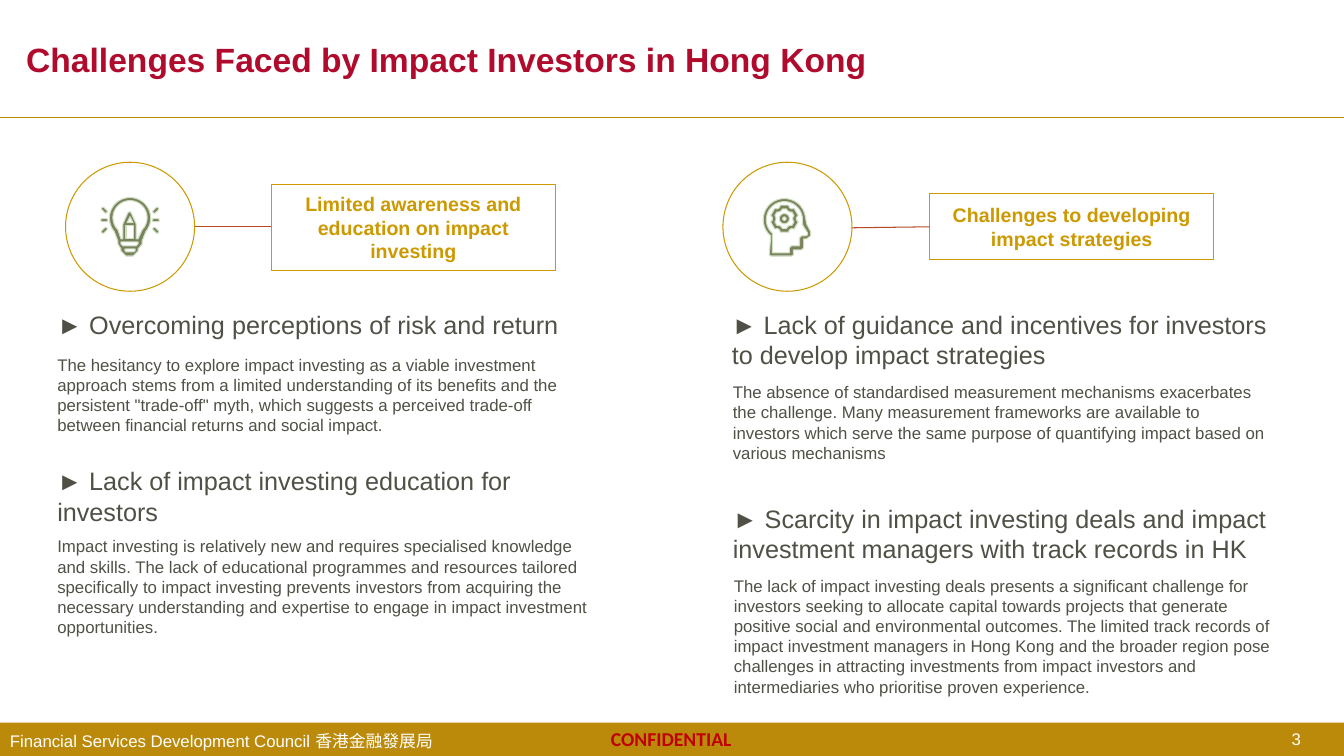
from dataclasses import dataclass
from math import cos, radians, sin

from lxml.etree import SubElement
from pptx import Presentation
from pptx.dml.color import RGBColor
from pptx.enum.shapes import MSO_CONNECTOR as Connector
from pptx.enum.shapes import MSO_SHAPE as Preset
from pptx.enum.text import MSO_ANCHOR as Anchor
from pptx.enum.text import MSO_AUTO_SIZE as AutoSize
from pptx.enum.text import PP_ALIGN as Align
from pptx.oxml.ns import qn
from pptx.util import Emu, Pt

EMU_PER_PX = 9144  # 100 px to the inch
Point = tuple[float, float]


@dataclass(frozen=True)
class Theme:
    font: str = "Arial"
    stamp_font: str = "Calibri"
    title: str = "B00B2D"
    gold: str = "CC9900"
    footer: str = "BB8A0A"
    stamp: str = "C00000"
    link: str = "B64926"
    body: str = "505046"
    icon: str = "7B815C"
    icon_edge: str = "CDDFC1"
    white: str = "FFFFFF"
    title_size: int = 24
    heading_size: int = 18
    label_size: int = 14
    body_size: int = 12
    line_width: float = 0.75


@dataclass(frozen=True)
class Box:
    left: int
    top: int
    width: int
    height: int


@dataclass(frozen=True)
class Theme_Header:
    circle: Box
    label: Box
    text: str
    link_start: int
    link_end: int


@dataclass(frozen=True)
class Challenge:
    heading_box: Box
    heading: str
    body_box: Box
    body: str


@dataclass(frozen=True)
class Ray:
    center_x: int
    center_y: int
    rotation: int


THEME = Theme()

HEADERS = [
    Theme_Header(Box(65, 161, 128, 128), Box(269, 183, 282, 85),
                 "Limited awareness and education on impact investing", 225, 225),
    Theme_Header(Box(717, 161, 128, 128), Box(922, 192, 282, 66),
                 "Challenges to developing impact strategies", 226, 225),
]
CHALLENGES = [
    Challenge(Box(47, 302, 553, 40), "► Overcoming perceptions of risk and return",
              Box(47, 347, 553, 40),
              "The hesitancy to explore impact investing as a viable investment approach stems from a "
              "limited understanding of its benefits and the persistent \"trade-off\" myth, which "
              "suggests a perceived trade-off between financial returns and social impact."),
    Challenge(Box(47, 457, 553, 64), "► Lack of impact investing education for investors",
              Box(47, 527, 553, 40),
              "Impact investing is relatively new and requires specialised knowledge and skills. The "
              "lack of educational programmes and resources tailored specifically to impact investing "
              "prevents investors from acquiring the necessary understanding and expertise to engage "
              "in impact investment opportunities."),
    Challenge(Box(716, 302, 553, 115),
              "► Lack of guidance and incentives for investors to develop impact strategies",
              Box(717, 374, 553, 40),
              "The absence of standardised measurement mechanisms exacerbates the challenge. Many "
              "measurement frameworks are available to investors which serve the same purpose of "
              "quantifying impact based on various mechanisms"),
    Challenge(Box(717, 494, 570, 115),
              "► Scarcity in impact investing deals and impact investment managers with track "
              "records in HK",
              Box(718, 566, 553, 40),
              "The lack of impact investing deals presents a significant challenge for investors "
              "seeking to allocate capital towards projects that generate positive social and "
              "environmental outcomes. The limited track records of impact investment managers in "
              "Hong Kong and the broader region pose challenges in attracting investments from impact "
              "investors and intermediaries who prioritise proven experience."),
]
RAYS = [Ray(103, 218, 0), Ray(103, 208, 45), Ray(103, 228, -45),
        Ray(154, 218, 0), Ray(154, 208, -45), Ray(154, 228, 45)]


def px(length: float) -> Emu:
    return Emu(round(length * EMU_PER_PX))


def color(value: str) -> RGBColor:
    return RGBColor.from_string(value)


def write(shape, text: str, *, size: int, ink: str, font: str = THEME.font, bold: bool = False,
          align: Align = Align.LEFT, anchor: Anchor = Anchor.TOP, wrap: bool = True,
          insets: tuple[int, int, int, int] = (10, 5, 10, 5), spacing: float | None = None) -> None:
    frame = shape.text_frame
    frame.auto_size = AutoSize.NONE
    frame.word_wrap = wrap
    frame.vertical_anchor = anchor
    (frame.margin_left, frame.margin_top,
     frame.margin_right, frame.margin_bottom) = map(px, insets)
    paragraph = frame.paragraphs[0]
    paragraph.alignment = align
    if spacing:
        paragraph.line_spacing = Pt(spacing)
    run = paragraph.add_run()
    run.text = text
    run.font.name, run.font.size, run.font.bold = font, Pt(size), bold
    run.font.color.rgb = color(ink)


def place(box: Box) -> tuple[Emu, Emu, Emu, Emu]:
    return px(box.left), px(box.top), px(box.width), px(box.height)


def add_text(slide, box: Box, text: str, **style) -> None:
    write(slide.shapes.add_textbox(*place(box)), text, **style)


def paint(shape, fill: str | None, line: str | None) -> None:
    shape.shadow.inherit = False
    if fill:
        shape.fill.solid()
        shape.fill.fore_color.rgb = color(fill)
    else:
        shape.fill.background()
    if line:
        shape.line.color.rgb = color(line)
        shape.line.width = Pt(THEME.line_width)
    else:
        shape.line.fill.background()


def add_preset(slide, preset: Preset, box: Box, fill: str | None = None, line: str | None = None):
    shape = slide.shapes.add_shape(preset, *place(box))
    paint(shape, fill, line)
    return shape


def add_line(slide, start: Point, end: Point, ink: str) -> None:
    line = slide.shapes.add_connector(Connector.STRAIGHT, *map(px, start + end))
    line.line.color.rgb = color(ink)
    line.line.width = Pt(THEME.line_width)
    SubElement(line._element.spPr, qn("a:effectLst"))


def arc(x: float, y: float, radius: float, start: int = 0, end: int = 350) -> list[Point]:
    return [(x + radius * cos(radians(angle)), y + radius * sin(radians(angle)))
            for angle in range(start, end + 1, 10)]


def gear(x: float, y: float, tip: tuple[float, int], root: tuple[float, int]) -> list[Point]:
    corners = [(root[0], -root[1]), (tip[0], -tip[1]), tip, root]
    return [(x + radius * cos(radians(tooth + offset)), y + radius * sin(radians(tooth + offset)))
            for tooth in range(30, 390, 60) for radius, offset in corners]


def add_outline(slide, *contours: list[Point]) -> None:
    rings = [[(px(x), px(y)) for x, y in contour] for contour in contours]
    builder = slide.shapes.build_freeform(*rings[0][0], scale=1.0)
    for index, ring in enumerate(rings):
        if index:
            builder.move_to(*ring[0])
        builder.add_line_segments(ring[1:], close=True)
    paint(builder.convert_to_shape(), THEME.icon, THEME.icon_edge)


def add_bulb(slide) -> None:
    glass = arc(129, 216.5, 20.5, 140, 400) + [
        (141, 239), (141, 242), (137, 247), (137, 249), (132, 254), (125, 254),
        (120, 249), (120, 247), (117, 242), (117, 239)]
    hollow = arc(129, 216, 17, 135, 405) + [
        (137, 237), (135, 237), (135, 222), (130, 211), (129, 210), (127, 211),
        (122, 222), (122, 237), (120, 237)]
    pencil_tip = [(129, 215), (132, 221), (126, 221)]
    pencil = [(125, 224), (132, 224), (132, 237), (125, 237)]
    collar = [(120, 240), (137, 240), (137, 242), (135, 244), (122, 244), (120, 242)]
    base = [(124, 247), (134, 247), (134, 249), (132, 250), (125, 250), (124, 249)]
    add_outline(slide, glass, hollow, pencil_tip, pencil, collar, base)
    for ray in RAYS:
        shape = add_preset(slide, Preset.ROUNDED_RECTANGLE,
                           Box(ray.center_x - 3, ray.center_y - 1, 7, 3),
                           THEME.icon, THEME.icon_edge)
        shape.adjustments[0] = 0.5
        shape.rotation = ray.rotation


def add_head(slide) -> None:
    profile = arc(778, 218, 21, 130, 350) + [
        (800, 222), (804, 230), (804, 234), (800, 237), (797, 237), (797, 246), (795, 248),
        (787, 248), (787, 253), (785, 254), (765, 254), (763, 253)]
    hollow = arc(778, 218, 18, 130, 350) + [
        (796, 223), (801, 231), (801, 233), (799, 234), (795, 234), (793, 236), (793, 244),
        (785, 244), (783, 246), (783, 251), (766, 251), (766, 234)]
    add_outline(slide, profile, hollow)
    add_outline(slide, gear(778, 217, (14, 17), (12, 24)), gear(778, 217, (10, 11), (8.5, 22)))
    add_outline(slide, arc(778, 217, 5), arc(778, 217, 1.7))


def main() -> None:
    presentation = Presentation()
    presentation.slide_width, presentation.slide_height = px(1333), px(750)
    slide = presentation.slides.add_slide(presentation.slide_layouts[5])

    # Title and footer
    title = slide.shapes.title
    title.left, title.top, title.width, title.height = place(Box(26, 39, 1218, 40))
    write(title, "Challenges Faced by Impact Investors in Hong Kong", size=THEME.title_size,
          ink=THEME.title, bold=True, insets=(0, 0, 0, 0))
    add_line(slide, (0, 117), (1333, 117), THEME.footer)
    add_preset(slide, Preset.RECTANGLE, Box(0, 717, 1333, 33), THEME.footer)
    add_text(slide, Box(1267, 720, 66, 22), "3", size=THEME.body_size, ink=THEME.white,
             insets=(14, 0, 0, 0), spacing=16.5)
    add_text(slide, Box(0, 720, 649, 30), "Financial Services Development Council 香港金融發展局",
             size=THEME.body_size, ink=THEME.white)
    add_text(slide, Box(596, 716, 141, 34), "CONFIDENTIAL", size=THEME.label_size,
             ink=THEME.stamp, font=THEME.stamp_font, bold=True, wrap=False)

    # Circles, labels and their links
    for header in HEADERS:
        add_preset(slide, Preset.OVAL, header.circle, line=THEME.gold)
        label = add_preset(slide, Preset.RECTANGLE, header.label, line=THEME.gold)
        write(label, header.text, size=THEME.label_size, ink=THEME.gold, bold=True,
              align=Align.CENTER, anchor=Anchor.MIDDLE)
        add_line(slide, (header.circle.left + header.circle.width, header.link_start),
                 (header.label.left, header.link_end), THEME.link)
    add_bulb(slide)
    add_head(slide)

    # Challenges
    for challenge in CHALLENGES:
        add_text(slide, challenge.heading_box, challenge.heading,
                 size=THEME.heading_size, ink=THEME.body)
        add_text(slide, challenge.body_box, challenge.body, size=THEME.body_size, ink=THEME.body)

    presentation.save("out.pptx")


if __name__ == "__main__":
    main()
